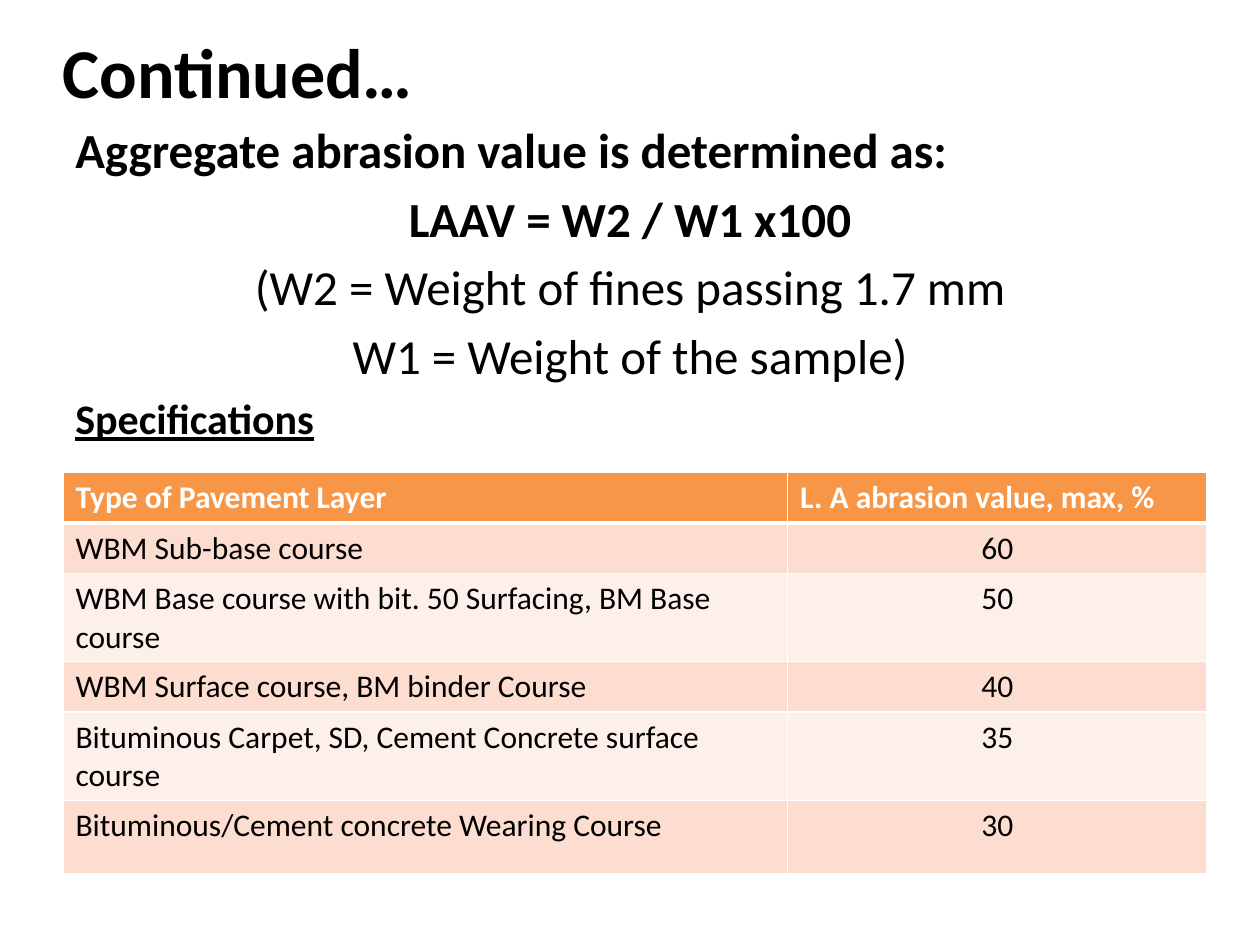
from pptx import Presentation
from pptx.util import Inches, Pt
from pptx.dml.color import RGBColor as Rgb
from pptx.enum.text import PP_ALIGN as Al, MSO_ANCHOR as Anc
from pptx.oxml import parse_xml as to_xml
from pptx.oxml.ns import nsdecls

HUES = {"ink": "000000", "paper": "FFFFFF", "head": "F79646",
        "odd": "FCDDCF", "even": "FDEFE9"}


class Deck:
    font = "Calibri"
    size = (10, 7.5)

    def __init__(self):
        self.prs = Presentation()
        self.prs.slide_width, self.prs.slide_height = map(Inches, self.size)
        self.slide = self.prs.slides.add_slide(self.prs.slide_layouts[6])

    def place(self, *shares):
        """Turn shares of the slide's size into lengths."""
        return [Inches(s * side) for s, side in zip(shares, self.size * 2)]

    def put(self, par, text, hue="ink", align=Al.LEFT, **style):
        par.alignment = align
        run = par.add_run()
        run.text = text
        for key, val in {"name": self.font, "bold": False, **style}.items():
            setattr(run.font, key, val)
        run.font.color.rgb = Rgb.from_string(HUES[hue])

    def text(self, box, lines, anchor=Anc.TOP, hang=0):
        frame = self.slide.shapes.add_textbox(*self.place(*box)).text_frame
        frame.word_wrap, frame.vertical_anchor = True, anchor
        for i, (words, style) in enumerate(lines):
            par = frame.add_paragraph() if i else frame.paragraphs[0]
            if hang:
                props = par._p.get_or_add_pPr()
                props.set("marL", str(Inches(hang)))
                props.set("indent", str(-Inches(hang)))
            if i:
                par.space_before = Pt(style["size"].pt * 0.2)
            self.put(par, words, **style)

    def edge(self, cell, base):
        """Draw white cell borders, with the bottom one of the given width."""
        props = cell._tc.get_or_add_tcPr()
        for i, (side, wide) in enumerate(zip("LRTB", (1, 1, 1, base))):
            props.insert(i, to_xml(
                f'<a:ln{side} {nsdecls("a")} w="{Pt(wide)}"><a:solidFill>'
                f'<a:srgbClr val="{HUES["paper"]}"/></a:solidFill></a:ln{side}>'))

    def table(self, box, wides, highs, rows):
        grid = self.slide.shapes.add_table(
            len(rows), len(wides), *self.place(*box)).table
        for col, wide in zip(grid.columns, wides):
            col.width = Inches(wide)
        for r, (row, high) in enumerate(zip(rows, highs)):
            grid.rows[r].height = Inches(high)
            top = r == 0
            fill = "head" if top else "odd" if r % 2 else "even"
            for c, words in enumerate(row):
                cell = grid.cell(r, c)
                cell.fill.solid()
                cell.fill.fore_color.rgb = Rgb.from_string(HUES[fill])
                self.edge(cell, 3 if top else 1)
                self.put(cell.text_frame.paragraphs[0], words,
                         hue="paper" if top else "ink",
                         align=Al.CENTER if c and not top else Al.LEFT,
                         size=Pt(18), bold=top)


def main():
    deck = Deck()

    # Title
    deck.text((0.04, 0.02, 0.9, 0.11),
              [("Continued…", {"size": Pt(40), "bold": True})], Anc.MIDDLE)

    # Formula and its terms
    big = {"size": Pt(28)}
    mid = {**big, "align": Al.CENTER}
    deck.text((0.05, 0.12, 0.9, 0.77), [
        ("Aggregate abrasion value is determined as:", {**big, "bold": True}),
        ("LAAV = W2 / W1 x100", {**mid, "bold": True}),
        ("(W2 = Weight of fines passing 1.7 mm", mid),
        ("W1 = Weight of the sample)", mid),
        ("Specifications", {"size": Pt(24), "bold": True, "underline": True}),
    ], hang=0.38)

    # Limits for each layer
    one, two = 0.4, 0.7
    deck.table((0.05, 0.5, 0.91, 0.42), (5.75, 3.33),
               (one, one, two, one, two, 0.58), [
        ("Type of Pavement Layer", "L. A abrasion value, max, %"),
        ("WBM Sub-base course", "60"),
        ("WBM Base course with bit. 50 Surfacing, BM Base course", "50"),
        ("WBM Surface course, BM binder Course", "40"),
        ("Bituminous Carpet, SD, Cement Concrete surface course", "35"),
        ("Bituminous/Cement concrete Wearing Course", "30"),
    ])

    deck.prs.save("out.pptx")


if __name__ == "__main__":
    main()
